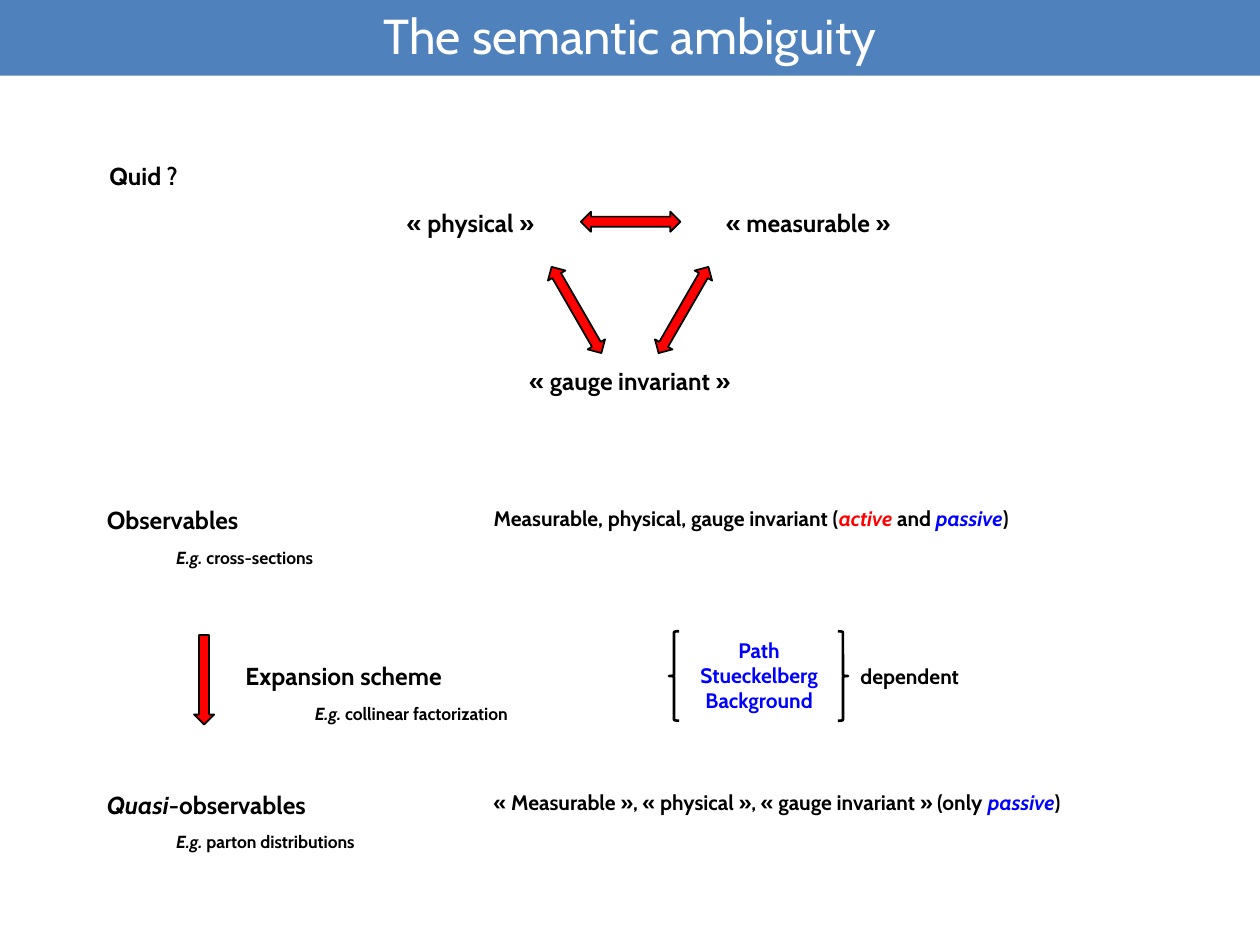
from pptx import Presentation
from pptx.dml.color import RGBColor
from pptx.enum import shapes, text
from pptx.util import Inches, Pt

BLACK = RGBColor(0x00, 0x00, 0x00)
WHITE = RGBColor(0xFF, 0xFF, 0xFF)
RED = RGBColor(0xFF, 0x00, 0x00)
BLUE = RGBColor(0x00, 0x00, 0xFF)
BAND_BLUE = RGBColor(0x4F, 0x81, 0xBD)
FONT = "Cabin"
SHAPE = shapes.MSO_SHAPE
CENTER = text.PP_ALIGN.CENTER
LEFT = text.PP_ALIGN.LEFT


def inches(box):
    return [Inches(length) for length in box]


def write_runs(paragraph, runs, size=14, color=BLACK, bold=True, align=LEFT):
    """Write runs given as plain strings or (text, {"italic", "color"}) pairs."""
    paragraph.alignment = align
    for item in runs:
        words, style = (item, {}) if isinstance(item, str) else item
        run = paragraph.add_run()
        run.text = words
        run.font.name = FONT
        run.font.size = Pt(size)
        run.font.bold = bold
        run.font.italic = style.get("italic", False)
        run.font.color.rgb = style.get("color", color)


def add_text(slide, box, *lines, **style):
    """Add a text box with one paragraph for each list of runs."""
    frame = slide.shapes.add_textbox(*inches(box)).text_frame
    frame.word_wrap = True
    frame.auto_size = text.MSO_AUTO_SIZE.SHAPE_TO_FIT_TEXT
    for index, runs in enumerate(lines):
        paragraph = frame.add_paragraph() if index else frame.paragraphs[0]
        write_runs(paragraph, runs, **style)


def add_figure(slide, kind, box, fill=None, line_width=None, rotation=0):
    shape = slide.shapes.add_shape(kind, *inches(box))
    shape.shadow.inherit = False
    shape.rotation = rotation
    if fill is None:
        shape.fill.background()
    else:
        shape.fill.solid()
        shape.fill.fore_color.rgb = fill
    if line_width is None:
        shape.line.fill.background()
    else:
        shape.line.color.rgb = BLACK
        shape.line.width = Pt(line_width)
    return shape


def add_title(slide, words):
    title = slide.shapes.title
    title.left, title.top, title.width, title.height = inches((0, 0, 10, 0.55))
    frame = title.text_frame
    frame.auto_size = text.MSO_AUTO_SIZE.NONE
    frame.vertical_anchor = text.MSO_ANCHOR.MIDDLE
    write_runs(frame.paragraphs[0], [words], size=28, color=WHITE,
               bold=False, align=CENTER)
    band = add_figure(slide, SHAPE.RECTANGLE, (0, 0, 10, 0.6), BAND_BLUE)
    title.element.addprevious(band.element)


def add_triangle(slide):
    """Add the three notions and the double arrows that link them."""
    add_text(slide, (2.95, 1.6, 1.57, 0.34), ["« physical »"], align=CENTER)
    add_text(slide, (5.47, 1.6, 1.89, 0.34), ["« measurable »"], align=CENTER)
    add_text(slide, (3.74, 2.86, 2.52, 0.34), ["« gauge invariant »"], align=CENTER)
    for left, top, rotation in ((4.61, 1.68, 0), (5.03, 2.38, 300), (4.18, 2.38, 60)):
        add_figure(slide, SHAPE.LEFT_RIGHT_ARROW, (left, top, 0.79, 0.16),
                   RED, line_width=1, rotation=rotation)


def add_topic(slide, left, top, heading, example, width=2.13):
    """Add a heading with its indented example below."""
    add_text(slide, (left, top, width, 0.34), heading)
    add_text(slide, (left + 0.55, top + 0.33, 2.28, 0.27),
             [("E.g. ", {"italic": True}), example], size=10)


def add_dependence(slide):
    """Add the list in braces and the word that follows it."""
    for left, rotation in ((5.31, 0), (6.65, 180)):
        add_figure(slide, SHAPE.LEFT_BRACE, (left, 5.01, 0.08, 0.71),
                   line_width=1.5, rotation=rotation)
    add_text(slide, (5.08, 5.01, 1.89, 0.71), ["Path"], ["Stueckelberg"],
             ["Background"], size=12, color=BLUE, align=CENTER)
    add_text(slide, (6.73, 5.22, 1.34, 0.3), ["dependent"], size=12)


def main():
    presentation = Presentation()
    presentation.slide_width = Inches(10)
    presentation.slide_height = Inches(7.5)
    slide = presentation.slides.add_slide(presentation.slide_layouts[5])

    add_title(slide, "The semantic ambiguity")
    add_text(slide, (0.77, 1.23, 0.84, 0.34), ["Quid ?"])
    add_triangle(slide)

    add_topic(slide, 0.75, 3.96, ["Observables"], "cross-sections")
    add_topic(slide, 1.85, 5.2, ["Expansion scheme"], "collinear factorization",
              width=3.23)
    add_topic(slide, 0.75, 6.22, [("Quasi", {"italic": True}), "-observables"],
              "parton distributions")
    add_figure(slide, SHAPE.DOWN_ARROW, (1.54, 5.04, 0.16, 0.71), RED, line_width=1)

    active = ("active ", {"italic": True, "color": RED})
    passive = ("passive", {"italic": True, "color": BLUE})
    add_text(slide, (3.82, 3.96, 6.06, 0.3),
             ["Measurable, physical, gauge invariant (", active, "and ", passive, ")"],
             size=12)
    add_text(slide, (3.82, 6.22, 6.06, 0.3),
             ["« Measurable », « physical », « gauge invariant » (only ", passive, ")"],
             size=12)
    add_dependence(slide)

    presentation.save("out.pptx")


if __name__ == "__main__":
    main()
